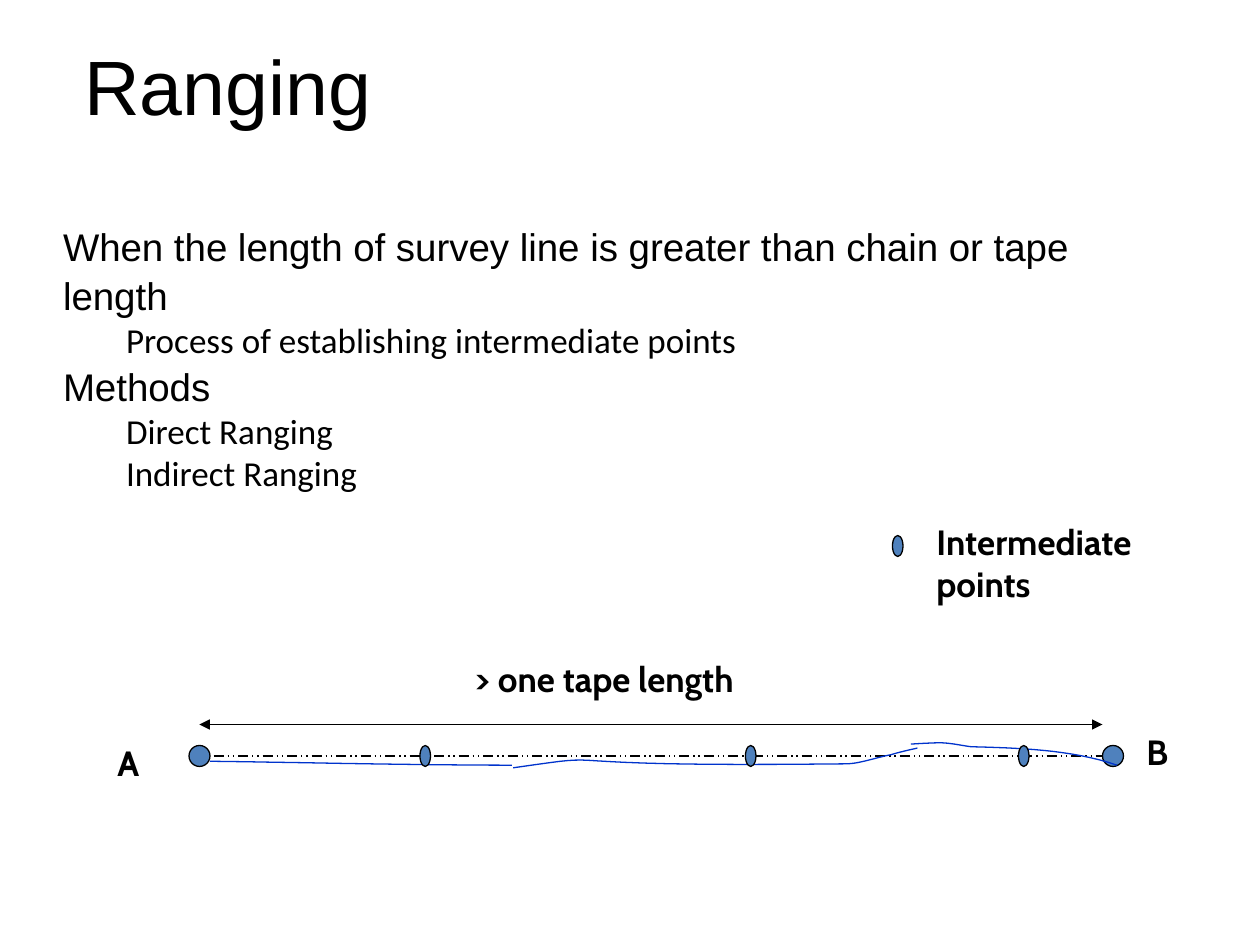
"""Build the slide on ranging a survey line with python-pptx."""
import pptx
import pptx.dml.color
import pptx.enum.dml
import pptx.enum.shapes
import pptx.enum.text
import pptx.oxml
import pptx.oxml.ns
import pptx.util

PX = 9525
BLACK = pptx.dml.color.RGBColor(0x00, 0x00, 0x00)
STEEL = pptx.dml.color.RGBColor(0x4F, 0x81, 0xBD)
BLUE = pptx.dml.color.RGBColor(0x00, 0x33, 0xCC)
MID = 576
ROUND, SLIM, TALL = 16, 8, 16

LIST = [
    (0, "When the length of survey line is greater than chain or tape length"),
    (1, "Process of establishing intermediate points"),
    (0, "Methods"),
    (1, "Direct Ranging"),
    (1, "Indirect Ranging"),
]
LOOKS = [("Arial", 22, 1.06), ("Calibri", 20, 1.0)]

DOTS = [
    (144, MID, ROUND),
    (840, MID, ROUND),
    (320, MID, SLIM),
    (568, MID, SLIM),
    (776, MID, SLIM),
    (680, 416, SLIM),
]
LABELS = [
    ("A", 80, 560, 56),
    ("B", 864, 552, 56),
    ("> one tape length", 352, 496, 288),
    ("Intermediate points", 704, 392, 224),
]
TAPES = [
    [(160, 580), (236, 581), (313, 583), (390, 583)],
    [(391, 585), (482, 572), (388, 585), (644, 582), (655, 582),
     (668, 577), (679, 575), (685, 573), (699, 570), (699, 570)],
    [(851, 583), (816, 571), (776, 570), (740, 569), (732, 568),
     (724, 566), (716, 566), (709, 566), (694, 567), (694, 567)],
]


def px(*vals):
    """Turn pixel lengths into EMU."""
    return [pptx.util.Emu(val * PX) for val in vals]


def add_xml(node, tag, **attrs):
    """Append an empty DrawingML element to a node."""
    child = pptx.oxml.parse_xml(f"<a:{tag} {pptx.oxml.ns.nsdecls('a')}/>")
    for key, val in attrs.items():
        child.set(key, val)
    node.append(child)


def set_font(para, face, size, bold=False):
    """Set the black font of a paragraph."""
    font = para.font
    font.name, font.size, font.bold = face, pptx.util.Pt(size), bold
    font.color.rgb = BLACK


def set_line(line, color):
    """Give a line its colour and thin width."""
    line.color.rgb = color
    line.width = pptx.util.Pt(0.75)


def place(hold, left, top, width, height):
    """Move a placeholder and return its text frame without margins."""
    hold.left, hold.top, hold.width, hold.height = px(left, top, width, height)
    frame = hold.text_frame
    frame.margin_left = frame.margin_right = 0
    frame.margin_top = frame.margin_bottom = 0
    frame.vertical_anchor = pptx.enum.text.MSO_ANCHOR.TOP
    frame.auto_size = pptx.enum.text.MSO_AUTO_SIZE.NONE
    return frame


def fill_title(slide):
    """Write the slide title."""
    frame = place(slide.shapes.title, 48, 29, 864, 120)
    frame.text = " Ranging"
    para = frame.paragraphs[0]
    para.alignment = pptx.enum.text.PP_ALIGN.LEFT
    set_font(para, "Arial", 44)


def fill_list(slide):
    """Write the two-level list without bullets."""
    frame = place(slide.placeholders[1], 48, 168, 808, 240)
    frame.text = "\n".join(text for level, text in LIST)
    for para, (level, text) in zip(frame.paragraphs, LIST):
        face, size, pitch = LOOKS[level]
        para.level = level
        para.space_before = pptx.util.Pt(0)
        para.line_spacing = pitch
        props = para._p.get_or_add_pPr()
        props.set("marL", str(level * 48 * PX))
        props.set("indent", "0")
        add_xml(props, "buNone")
        set_font(para, face, size)


def add_label(slide, text, left, top, width):
    """Add a bold label."""
    box = slide.shapes.add_textbox(*px(left, top, width, 38))
    frame = box.text_frame
    frame.word_wrap = True
    frame.text = text
    set_font(frame.paragraphs[0], "Cabin", 20, True)


def add_dot(slide, left, mid, width):
    """Add an oval point centred on a height."""
    oval = pptx.enum.shapes.MSO_SHAPE.OVAL
    dot = slide.shapes.add_shape(oval, *px(left, mid - TALL // 2, width, TALL))
    dot.shadow.inherit = False
    dot.fill.solid()
    dot.fill.fore_color.rgb = STEEL
    set_line(dot.line, BLACK)


def add_rule(slide, left, right, top):
    """Add a level black line and return it."""
    kind = pptx.enum.shapes.MSO_CONNECTOR.STRAIGHT
    rule = slide.shapes.add_connector(kind, *px(left, top, right, top))
    set_line(rule.line, BLACK)
    add_xml(rule._element.spPr, "effectLst")
    return rule


def trace(knots, steps=16):
    """Return EMU points along a chain of cubic curves."""
    points = []
    for start in range(0, len(knots) - 1, 3):
        for step in range(1, steps + 1):
            t = step / steps
            parts = ((1 - t) ** 3, 3 * t * (1 - t) ** 2,
                     3 * t * t * (1 - t), t ** 3)
            points.append(tuple(
                PX * sum(part * knot[axis] for part, knot
                         in zip(parts, knots[start:start + 4]))
                for axis in (0, 1)))
    return points


def add_tape(slide, knots):
    """Add an open blue curve for a length of tape."""
    pen = slide.shapes.build_freeform(*px(*knots[0]))
    pen.add_line_segments(trace(knots), close=False)
    tape = pen.convert_to_shape()
    tape.shadow.inherit = False
    tape.fill.background()
    set_line(tape.line, BLUE)


def main():
    """Build and save the slide."""
    deck = pptx.Presentation()
    deck.slide_width, deck.slide_height = px(960, 720)
    slide = deck.slides.add_slide(deck.slide_layouts[1])
    fill_title(slide)
    fill_list(slide)
    chain = add_rule(slide, 144, 840, MID)
    chain.line.dash_style = pptx.enum.dml.MSO_LINE.DASH_DOT_DOT
    span = add_rule(slide, 152, 840, 552)
    for end in ("headEnd", "tailEnd"):
        add_xml(span.line._get_or_add_ln(), end, type="triangle")
    for dot in DOTS[:2]:
        add_dot(slide, *dot)
    for knots in TAPES:
        add_tape(slide, knots)
    for dot in DOTS[2:]:
        add_dot(slide, *dot)
    for label in LABELS:
        add_label(slide, *label)
    deck.save("out.pptx")


if __name__ == "__main__":
    main()
